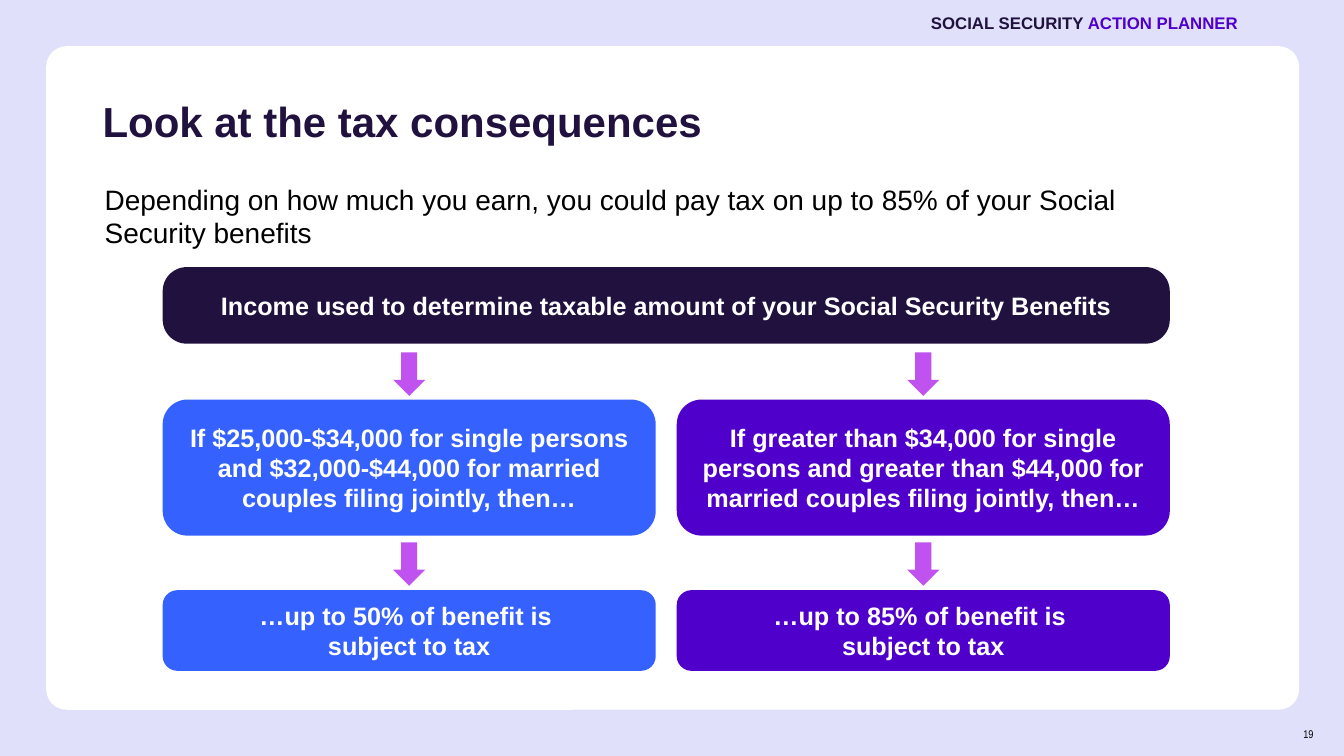
from dataclasses import dataclass

from pptx import Presentation
from pptx.dml.color import RGBColor
from pptx.enum.shapes import MSO_SHAPE
from pptx.enum.text import MSO_ANCHOR, PP_ALIGN
from pptx.util import Pt


@dataclass(frozen=True)
class Theme:
    background: str = "E0E0FB"
    card: str = "FFFFFF"
    ink: str = "20113E"
    body: str = "000000"
    blue: str = "3562FF"
    purple: str = "4F00CA"
    arrow: str = "C053EF"
    light: str = "FFFFFF"
    font: str = "Arial"
    number_font: str = "Arial Narrow"
    title_size: float = 30
    body_size: float = 20
    label_size: float = 18
    header_size: float = 12
    number_size: float = 8


@dataclass(frozen=True)
class Box:
    left: float
    top: float
    width: float
    height: float

    def lengths(self):
        return Pt(self.left), Pt(self.top), Pt(self.width), Pt(self.height)


THEME = Theme()


def add_span(para, text, size, color, bold=False, font=THEME.font):
    span = para.add_run()
    span.text = text
    span.font.name = font
    span.font.size = Pt(size)
    span.font.bold = bold
    span.font.color.rgb = RGBColor.from_string(color)


def add_lines(para, lines, size, color, bold=False):
    for index, line in enumerate(lines):
        if index:
            para.add_line_break()
        add_span(para, line, size, color, bold)


def add_text(page, box, align=PP_ALIGN.LEFT, anchor=MSO_ANCHOR.MIDDLE):
    frame = page.shapes.add_textbox(*box.lengths()).text_frame
    frame.word_wrap = True
    frame.vertical_anchor = anchor
    para = frame.paragraphs[0]
    para.alignment = align
    return para


def add_block(page, kind, box, color):
    block = page.shapes.add_shape(kind, *box.lengths())
    block.shadow.inherit = False
    block.fill.solid()
    block.fill.fore_color.rgb = RGBColor.from_string(color)
    block.line.fill.background()
    return block


def add_rounded(page, box, color, rounding):
    block = add_block(page, MSO_SHAPE.ROUNDED_RECTANGLE, box, color)
    block.adjustments[0] = rounding
    return block


def add_label(page, box, color, rounding, lines):
    frame = add_rounded(page, box, color, rounding).text_frame
    frame.word_wrap = True
    frame.vertical_anchor = MSO_ANCHOR.MIDDLE
    para = frame.paragraphs[0]
    para.alignment = PP_ALIGN.CENTER
    add_lines(para, lines, THEME.label_size, THEME.light, True)


def add_header(page, box):
    para = add_text(page, box, PP_ALIGN.RIGHT)
    add_span(para, "SOCIAL SECURITY", THEME.header_size, THEME.ink, True)
    add_span(para, " ACTION PLANNER", THEME.header_size, THEME.purple, True)


def add_heading(page, box):
    para = add_text(page, Box(box.left, box.top, box.width, 66.2))
    para.line_spacing = 0.9
    add_span(para, "Look at the tax consequences", THEME.title_size, THEME.ink, True)

    intro = Box(box.left + 1.4, box.top + 71.3, 818, 59)
    para = add_text(page, intro, anchor=MSO_ANCHOR.TOP)
    lines = [
        "Depending on how much you earn, you could pay tax on up to 85% of your Social ",
        "Security benefits",
    ]
    add_lines(para, lines, THEME.body_size, THEME.body)


def add_branch(page, box, color, condition, outcome):
    add_label(page, Box(box.left, box.top + 33.6, box.width, 97.2), color, 0.182, [condition])
    add_label(page, Box(box.left, box.top + 169.8, box.width, 57.6), color, 0.182, outcome)
    arrow_width = 23
    arrow_left = box.left + (box.width - arrow_width) / 2
    for offset in (0, 135.6):
        arrow = Box(arrow_left, box.top + offset, arrow_width, 31)
        add_block(page, MSO_SHAPE.DOWN_ARROW, arrow, THEME.arrow)


def add_tax_flow(page, box):
    income = "Income used to determine taxable amount of your Social Security Benefits"
    add_label(page, Box(box.left, box.top, box.width, 54.7), THEME.ink, 0.314, [income])

    branches = [
        (
            THEME.blue,
            "If $25,000-$34,000 for single persons and $32,000-$44,000 "
            "for married couples filing jointly, then…",
            ["…up to 50% of benefit is ", "subject to tax"],
        ),
        (
            THEME.purple,
            "If greater than $34,000 for single persons and greater than $44,000 "
            "for married couples filing jointly, then…",
            ["…up to 85% of benefit is ", "subject to tax"],
        ),
    ]
    gap = 15
    width = (box.width - gap) / len(branches)
    for index, (color, condition, outcome) in enumerate(branches):
        left = box.left + index * (width + gap)
        branch = Box(left, box.top + 61, width, box.height - 61)
        add_branch(page, branch, color, condition, outcome)


def add_page_number(page, box):
    para = add_text(page, box, PP_ALIGN.RIGHT)
    add_span(para, "19", THEME.number_size, THEME.body, font=THEME.number_font)


def build_tax_page(deck):
    page = deck.slides.add_slide(deck.slide_layouts[6])
    page.background.fill.solid()
    page.background.fill.fore_color.rgb = RGBColor.from_string(THEME.background)
    add_rounded(page, Box(33, 33, 895, 474), THEME.card, 0.031)
    add_header(page, Box(480, 0, 411.4, 32.4))
    add_heading(page, Box(66.2, 55.4, 855.4, 130))
    add_tax_flow(page, Box(116.2, 190.8, 719.4, 288.4))
    add_page_number(page, Box(895, 509.8, 50.4, 28.8))


def main():
    deck = Presentation()
    deck.slide_width = Pt(960)
    deck.slide_height = Pt(540)
    build_tax_page(deck)
    deck.save("out.pptx")


if __name__ == "__main__":
    main()
